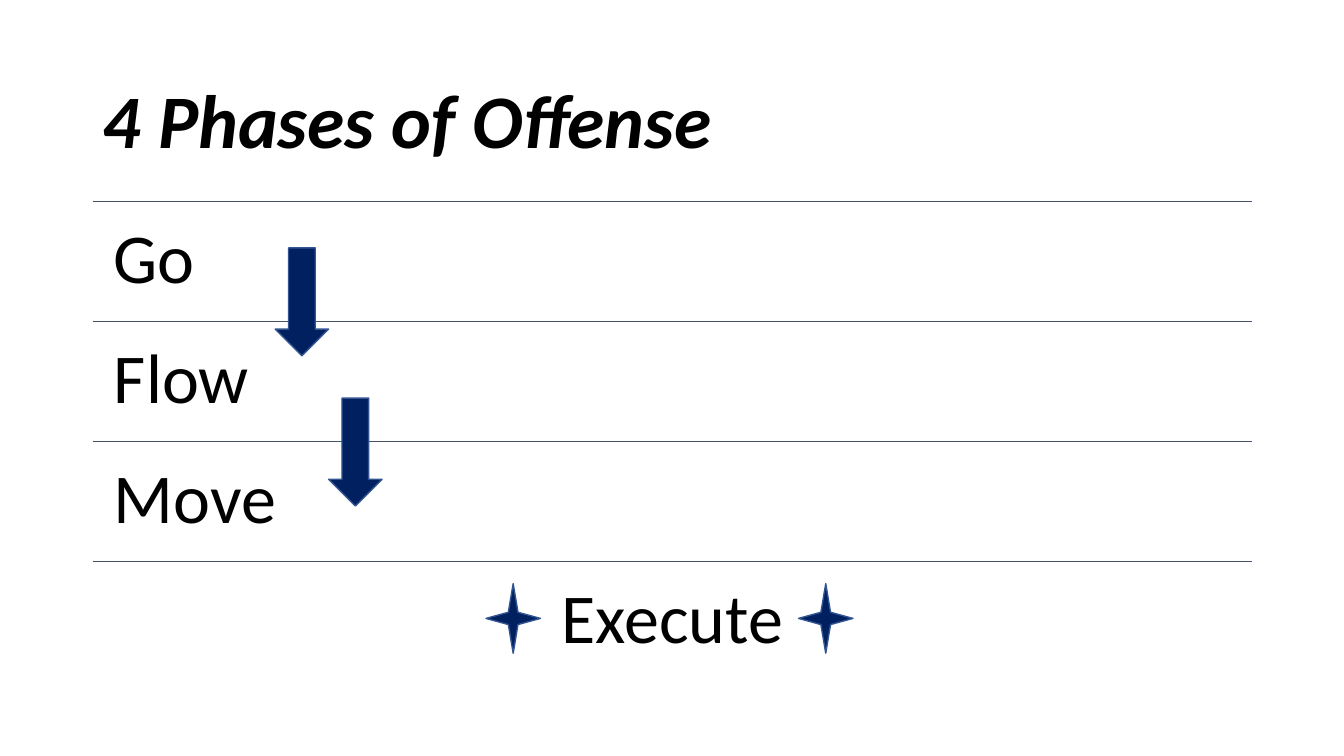
from dataclasses import dataclass

from lxml.etree import SubElement
from pptx import Presentation
from pptx.dml.color import RGBColor as Rgb
from pptx.enum.shapes import MSO_CONNECTOR as Conn, MSO_SHAPE as Kind
from pptx.enum.text import MSO_ANCHOR as Anchor, PP_ALIGN as Align
from pptx.oxml.ns import qn
from pptx.slide import Slide
from pptx.util import Inches, Pt


@dataclass(frozen=True)
class Theme:
    font: str = "Calibri"
    paper: Rgb = Rgb(0xFF, 0xFF, 0xFF)
    ink: Rgb = Rgb(0, 0, 0)
    rule: Rgb = Rgb(0x44, 0x54, 0x6A)
    navy: Rgb = Rgb(0x00, 0x20, 0x60)
    edge: Rgb = Rgb(0x32, 0x54, 0x91)
    title: int = 54
    body: int = 50
    line: int = 1


@dataclass(frozen=True)
class Box:
    left: float
    top: float
    width: float
    height: float

    def span(self) -> list[int]:
        """Left, top, width and height as slide lengths."""
        return [Inches(v) for v in (self.left, self.top, self.width, self.height)]


@dataclass(frozen=True)
class Label:
    text: str
    box: Box
    frame: dict
    para: dict
    font: dict


@dataclass(frozen=True)
class Mark:
    kind: Kind
    box: Box


THEME = Theme()
WIDE, HIGH = 13.33, 7.5
LEFT, WIDTH = 0.92, 11.5
TOP, STEP = 2.0, 1.19
PHASES = {"Go": Align.LEFT, "Flow": Align.LEFT,
          "Move": Align.LEFT, "Execute": Align.CENTER}

SIDES = ("margin_left", "margin_top", "margin_right", "margin_bottom")
ROW = {"word_wrap": True, "vertical_anchor": Anchor.TOP,
       **dict.fromkeys(SIDES, Inches(0.21))}
HEAD = Label("4 Phases of Offense", Box(LEFT, 0.61, WIDTH, 1.24),
             {"word_wrap": True, "vertical_anchor": Anchor.MIDDLE},
             {"line_spacing": 0.9},
             {"size": Pt(THEME.title), "bold": True, "italic": True})

MARKS = [
    *(Mark(Kind.DOWN_ARROW, Box(x, y, 0.53, 1.07)) for x, y in ((2.73, 2.46), (3.26, 3.95))),
    *(Mark(Kind.STAR_4_POINT, Box(x, 5.79, 0.54, 0.69)) for x in (4.82, 7.92)),
]


def apply(item: object, form: dict) -> None:
    for name, value in form.items():
        setattr(item, name, value)


def add_label(slide: Slide, label: Label) -> None:
    frame = slide.shapes.add_textbox(*label.box.span()).text_frame
    para = frame.paragraphs[0]
    run = para.add_run()
    run.text = label.text
    apply(frame, label.frame)
    apply(para, label.para)
    apply(run.font, {"name": THEME.font, **label.font})
    run.font.color.rgb = THEME.ink


def add_rule(slide: Slide, top: float) -> None:
    rule = slide.shapes.add_connector(
        Conn.STRAIGHT, Inches(LEFT), Inches(top), Inches(LEFT + WIDTH), Inches(top))
    rule.line.color.rgb = THEME.rule
    rule.line.width = Pt(THEME.line)
    SubElement(rule.element.spPr, qn("a:effectLst"))


def add_mark(slide: Slide, mark: Mark, fill: Rgb, edge: Rgb | None = None) -> None:
    shape = slide.shapes.add_shape(mark.kind, *mark.box.span())
    shape.shadow.inherit = False
    shape.fill.solid()
    shape.fill.fore_color.rgb = fill
    if edge is None:
        shape.line.fill.background()
    else:
        shape.line.color.rgb = edge
        shape.line.width = Pt(THEME.line)


def main() -> None:
    deck = Presentation()
    apply(deck, {"slide_width": Inches(WIDE), "slide_height": Inches(HIGH)})
    slide = deck.slides.add_slide(deck.slide_layouts[6])

    add_mark(slide, Mark(Kind.RECTANGLE, Box(0, 0, WIDE, HIGH)), THEME.paper)
    add_label(slide, HEAD)
    for i, (text, align) in enumerate(PHASES.items()):
        top = TOP + i * STEP
        add_rule(slide, top)
        add_label(slide, Label(text, Box(LEFT, top, WIDTH, STEP), ROW,
                               {"line_spacing": 0.9, "alignment": align},
                               {"size": Pt(THEME.body)}))
    for mark in MARKS:
        add_mark(slide, mark, THEME.navy, THEME.edge)

    deck.save("out.pptx")


if __name__ == "__main__":
    main()
